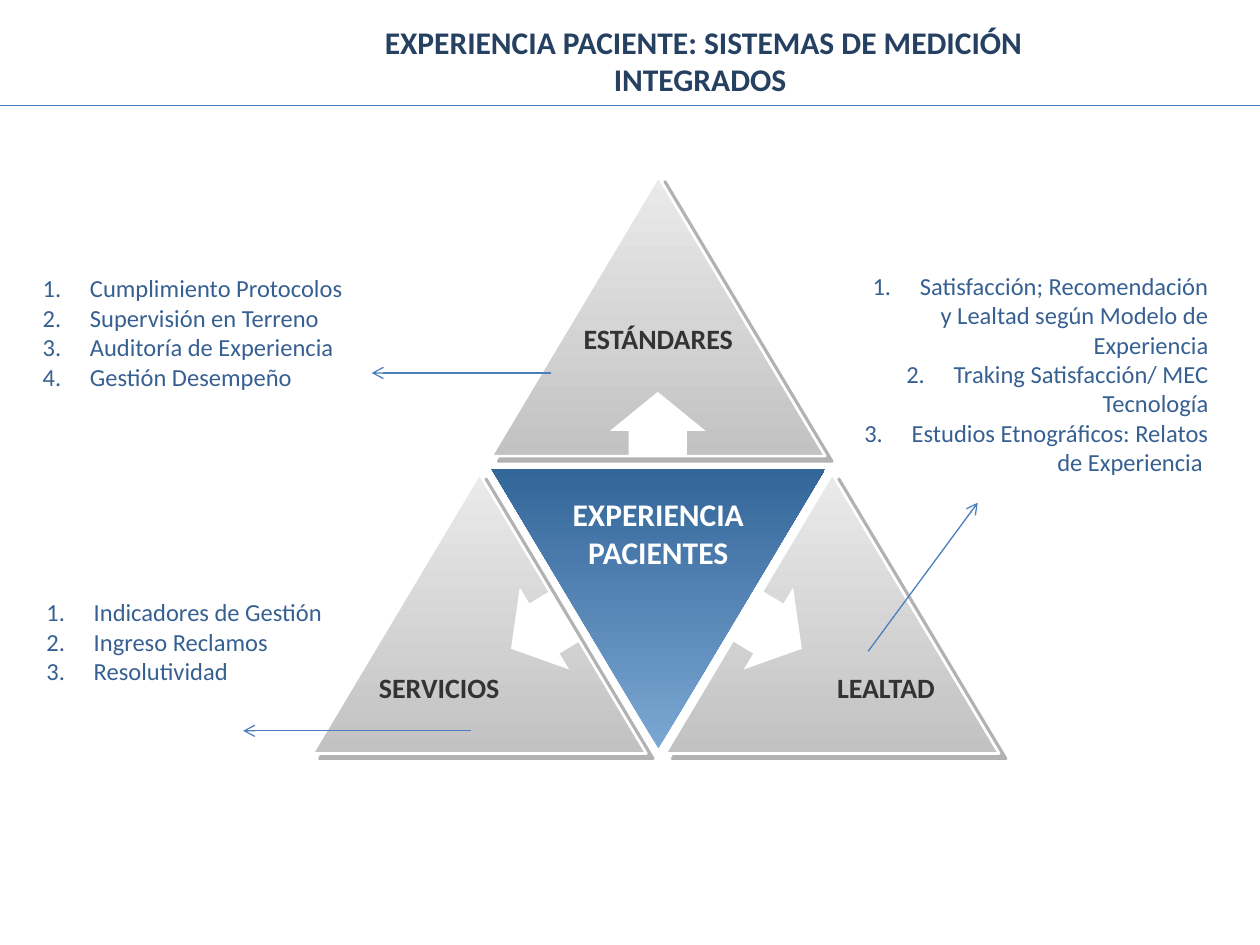
import lxml.etree
import pptx
import pptx.dml.color
import pptx.enum.shapes
import pptx.enum.text
import pptx.oxml
import pptx.oxml.ns
import pptx.util

RGB = pptx.dml.color.RGBColor
ALIGN = pptx.enum.text.PP_ALIGN
SHAPES = pptx.enum.shapes.MSO_SHAPE
NAVY = RGB(0x25, 0x40, 0x61)
LIST_BLUE = RGB(0x37, 0x60, 0x92)
LINE_BLUE = RGB(0x4B, 0x7E, 0xBC)
DEEP_BLUE = RGB(0x33, 0x66, 0x99)
SKY_BLUE = RGB(0x7B, 0xA7, 0xD3)
PALE_GRAY = RGB(0xEA, 0xEA, 0xEA)
MID_GRAY = RGB(0xC2, 0xC2, 0xC2)
SHADOW_GRAY = RGB(0xB2, 0xB2, 0xB2)
LABEL_GRAY = RGB(0x33, 0x33, 0x33)
WHITE = RGB(0xFF, 0xFF, 0xFF)

COLUMNS, ROWS = 100, 75
TRIANGLE_WIDTH, TRIANGLE_HEIGHT = 26.5, 22.2


def add_xml(parent, tag, **attributes):
    return lxml.etree.SubElement(parent, pptx.oxml.ns.qn(tag), attributes)


class SlideKit:
    font = "Calibri"

    def __init__(self, deck):
        self.slide = deck.slides.add_slide(deck.slide_layouts[6])
        self.column = deck.slide_width / COLUMNS
        self.row = deck.slide_height / ROWS

    def x(self, columns):
        return round(columns * self.column)

    def y(self, rows):
        return round(rows * self.row)

    def box(self, left, top, width, height):
        return self.x(left), self.y(top), self.x(width), self.y(height)

    def text(self, place, lines, size, color, bold=False, align=ALIGN.LEFT,
             padded=False, wrap=True, numbered=False):
        frame = self.slide.shapes.add_textbox(*self.box(*place)).text_frame
        frame.word_wrap = wrap
        frame.auto_size = pptx.enum.text.MSO_AUTO_SIZE.SHAPE_TO_FIT_TEXT
        if padded:
            frame.margin_left = self.x(1)
            frame.margin_right = self.x(0.8)
            frame.margin_top = frame.margin_bottom = self.y(1)
        frame.text = "\n".join(lines)
        for paragraph in frame.paragraphs:
            paragraph.alignment = align
            for run in paragraph.runs:
                run.font.name = self.font
                run.font.size = pptx.util.Pt(size)
                run.font.bold = bold
                run.font.color.rgb = color
            if numbered:
                properties = paragraph._p.get_or_add_pPr()
                indent = self.x(3.75)
                properties.set("marL", str(indent))
                properties.set("indent", str(-indent))
                add_xml(properties, "a:buFont", typeface="+mj-lt")
                add_xml(properties, "a:buAutoNum", type="arabicPeriod")

    def triangle(self, left, top, first, last, rotation=0, raised=True):
        x, y, width, height = self.box(left, top, TRIANGLE_WIDTH, TRIANGLE_HEIGHT)
        outline = self.slide.shapes.build_freeform(x + width // 2, y)
        outline.add_line_segments([(x, y + height), (x + width, y + height)])
        shape = outline.convert_to_shape()
        shape.rotation = rotation
        shape.shadow.inherit = False
        shape.fill.gradient()
        shape.fill.gradient_angle = 270
        for stop, color in zip(shape.fill.gradient_stops, (first, last)):
            stop.color.rgb = color
        if not raised:
            shape.line.fill.background()
            return
        shape.line.color.rgb = WHITE
        shape.line.width = pptx.util.Pt(1.5)
        effects = shape._element.spPr.find(pptx.oxml.ns.qn("a:effectLst"))
        shadow = add_xml(effects, "a:outerShdw", dist=str(pptx.util.Pt(5)),
                         dir=str(37 * 60000), algn="ctr", rotWithShape="0")
        add_xml(shadow, "a:srgbClr", val=str(SHADOW_GRAY))

    def block_arrow(self, left, top, rotation):
        shape = self.slide.shapes.add_shape(
            SHAPES.DOWN_ARROW, *self.box(left, top, 7.6, 5))
        shape.adjustments[0] = 0.61
        shape.adjustments[1] = 0.62
        shape.rotation = rotation
        shape.shadow.inherit = False
        shape.fill.solid()
        shape.fill.fore_color.rgb = WHITE
        shape.line.fill.background()

    def line(self, start, end, arrow=True):
        connector = self.slide.shapes.add_connector(
            pptx.enum.shapes.MSO_CONNECTOR.STRAIGHT,
            self.x(start[0]), self.y(start[1]), self.x(end[0]), self.y(end[1]))
        connector.line.color.rgb = LINE_BLUE
        connector.line.width = pptx.util.Pt(0.75)
        if arrow:
            add_xml(connector.line._get_or_add_ln(), "a:tailEnd", type="arrow")
        add_xml(connector._element.spPr, "a:effectLst")


def main():
    deck = pptx.Presentation()
    deck.slide_width = pptx.util.Inches(10)
    deck.slide_height = pptx.util.Inches(7.5)
    kit = SlideKit(deck)

    kit.text((28.7, 1.3, 54.3, 7.1),
             ["EXPERIENCIA PACIENTE: SISTEMAS DE MEDICIÓN INTEGRADOS "],
             18, NAVY, bold=True, align=ALIGN.CENTER)

    kit.triangle(39, 37.2, SKY_BLUE, DEEP_BLUE, rotation=180, raised=False)
    for left, top in ((24.8, 37.6), (52.8, 37.6), (39, 14)):
        kit.triangle(left, top, PALE_GRAY, MID_GRAY)

    for left, top, rotation in ((48.4, 31.1, 180), (57.7, 47.7, 301.1),
                                (38.9, 47.7, 58.9)):
        kit.block_arrow(left, top, rotation)

    for label, place, align in (
            ("ESTÁNDARES", (42.1, 24.5, 20.1, 4.7), ALIGN.CENTER),
            ("SERVICIOS", (29.1, 52.2, 18.6, 4.7), ALIGN.LEFT),
            ("LEALTAD", (56.4, 52.2, 18.6, 4.7), ALIGN.RIGHT)):
        kit.text(place, [label], 16, LABEL_GRAY, bold=True, align=align, padded=True)
    kit.text((44.4, 38.3, 15.5, 8), ["EXPERIENCIA", "PACIENTES"], 18, WHITE,
             bold=True, align=ALIGN.CENTER, padded=True, wrap=False)

    standards = ["Cumplimiento Protocolos", "Supervisión en Terreno",
                 "Auditoría de Experiencia", "Gestión Desempeño"]
    services = ["Indicadores de Gestión", "Ingreso Reclamos", "Resolutividad"]
    loyalty = ["Satisfacción; Recomendación y Lealtad según Modelo de Experiencia",
               "Traking Satisfacción/ MEC Tecnología",
               "Estudios Etnográficos: Relatos de Experiencia "]
    for items, place, align in (
            (standards, (2.4, 21.2, 38.9, 10.4), ALIGN.LEFT),
            (services, (2.7, 46.9, 24.5, 8.1), ALIGN.LEFT),
            (loyalty, (67.3, 21, 29.6, 17.5), ALIGN.RIGHT)):
        kit.text(place, items, 14, LIST_BLUE, align=align, numbered=True)

    for start, end in (((68.9, 51.7), (77.6, 39.9)),
                       ((43.7, 29.6), (29.5, 29.6)),
                       ((37.4, 58), (19.3, 58))):
        kit.line(start, end)
    kit.line((0, 8.4), (COLUMNS, 8.4), arrow=False)

    deck.save("out.pptx")


if __name__ == "__main__":
    main()
